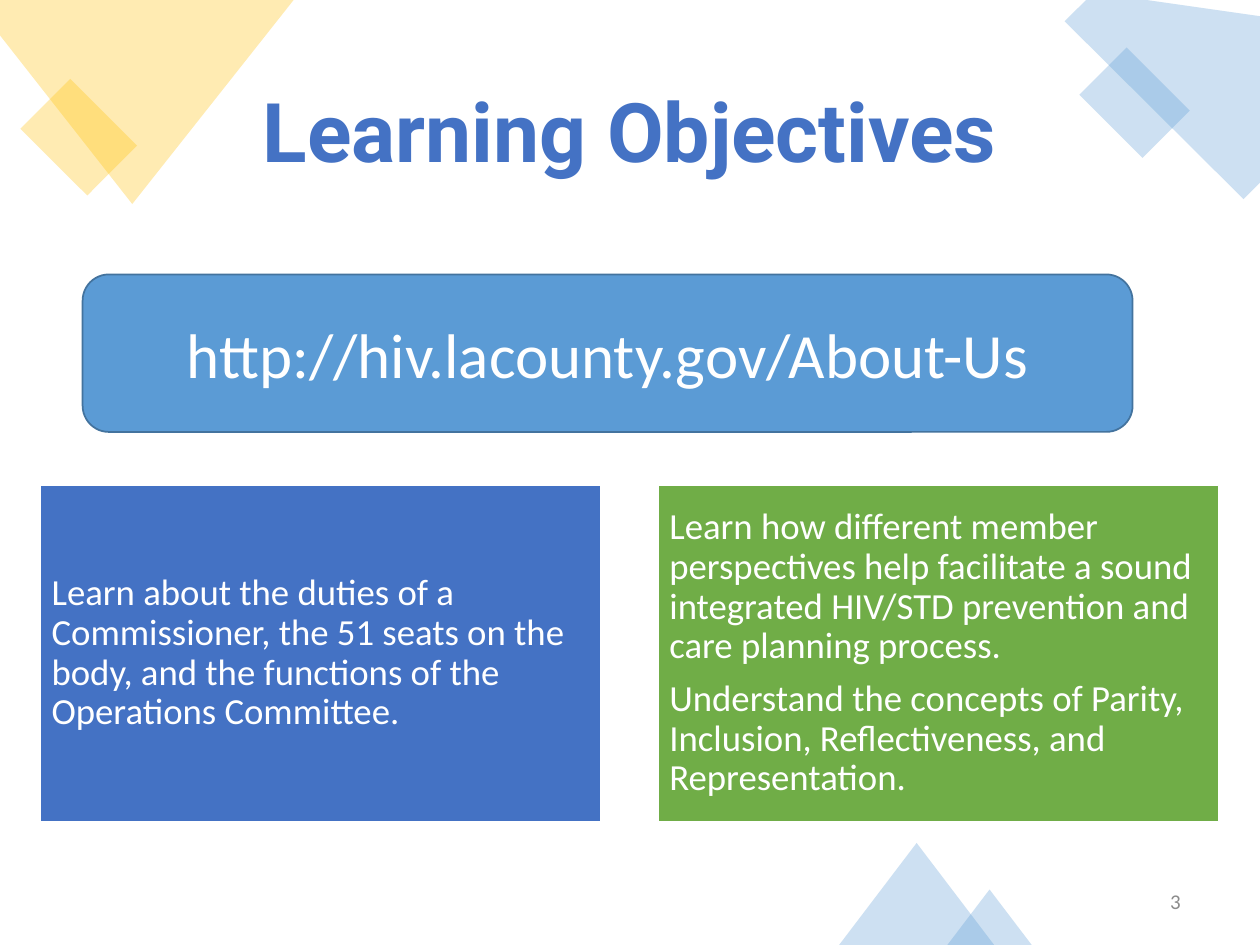
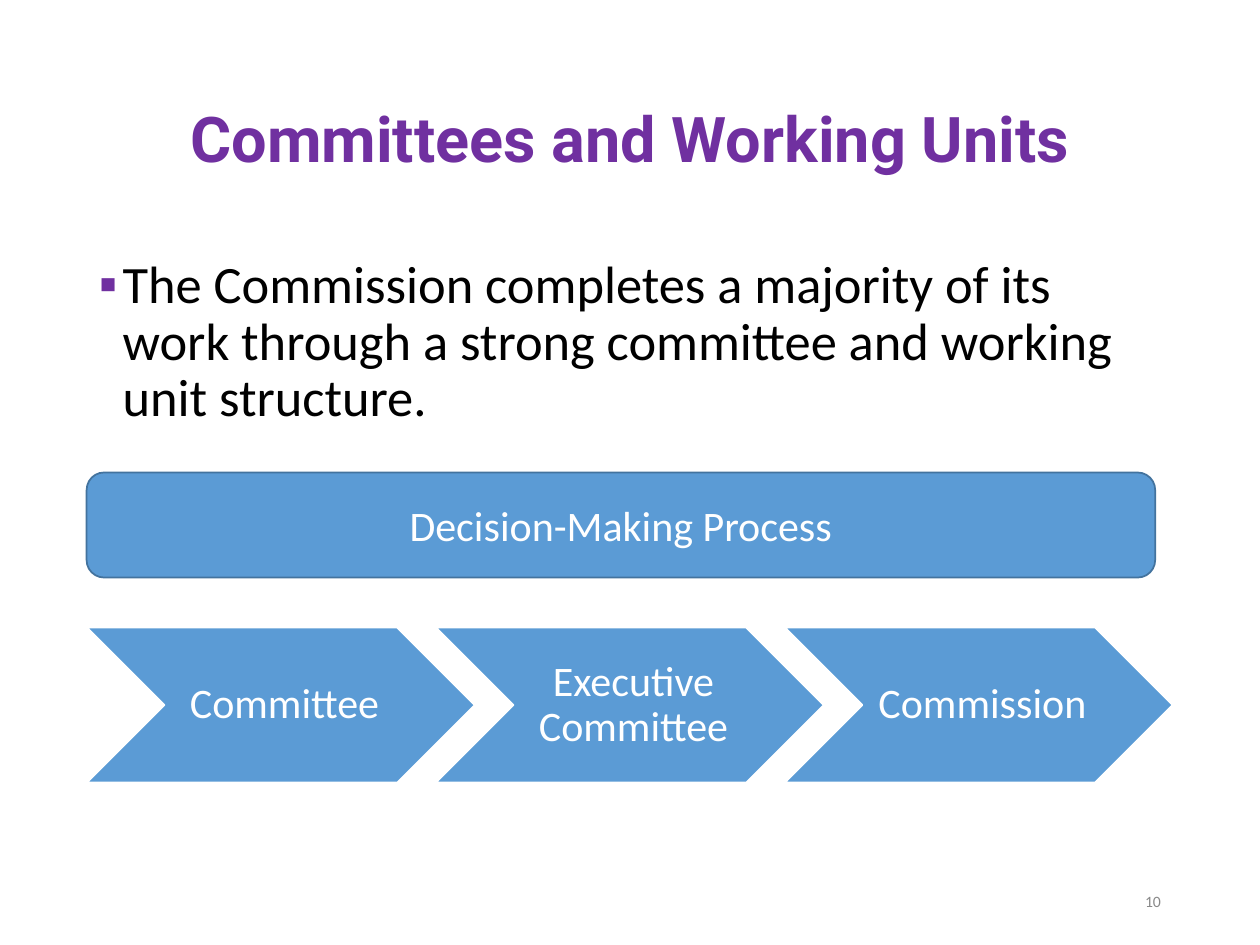
from dataclasses import dataclass, field
from typing import Any

from lxml.etree import SubElement
from pptx import Presentation
from pptx.dml.color import RGBColor
from pptx.enum.shapes import MSO_SHAPE
from pptx.enum.text import MSO_ANCHOR, MSO_AUTO_SIZE, PP_ALIGN
from pptx.oxml.ns import qn
from pptx.util import Pt

COLORS = {
    "indigo": "4472C4",
    "blue": "5B9BD5",
    "edge": "43739E",
    "green": "70AD47",
    "gold": "FFC000",
    "purple": "7030A0",
    "white": "FFFFFF",
    "black": "000000",
    "gray": "8C8C8C",
    "pale_gray": "898989",
}
BODY_FONT, TITLE_FONT = "Calibri", "Roboto"
DECOR_OPACITY = 30


@dataclass
class Box:
    left: float
    top: float
    width: float
    height: float

    def lengths(self) -> tuple:
        return tuple(Pt(v) for v in (self.left, self.top, self.width, self.height))


@dataclass
class Style:
    size: float
    color: str = "white"
    font: str = BODY_FONT
    bold: bool = False
    anchor: Any = MSO_ANCHOR.MIDDLE
    insets: tuple = (7.2, 3.6, 7.2, 3.6)
    para: dict = field(default_factory=dict)


@dataclass
class Panel:
    kind: Any
    box: Box
    fill: str
    line: str
    paragraphs: list
    style: Style


@dataclass
class Decor:
    kind: Any
    box: Box
    color: str
    rotation: float = 0


@dataclass
class Outline:
    points: list
    color: str


CENTERED = {"alignment": PP_ALIGN.CENTER}
TITLE_PARA = CENTERED | {"line_spacing": 0.9}
CARD_STYLE = Style(21, insets=(6.5,) * 4, para={
    "alignment": PP_ALIGN.LEFT, "line_spacing": 0.9, "space_after": Pt(7.35)})
STEP_STYLE = Style(24, insets=(7.2, 2.9, 2.9, 2.9), para=TITLE_PARA | {"space_after": Pt(8.4)})
BULLET_STYLE = Style(30, "black", anchor=MSO_ANCHOR.TOP, para={
    "line_spacing": 0.9, "space_before": Pt(7.5)})

OUTLINES = [
    Outline([(0, 0), (167.8, 0), (75.6, 116.6), (0, 20.2)], "gold"),
    Outline([(625, -4.3), (720.7, 9.4), (733, 91.4), (710.6, 113.8), (608.4, 12.2)], "blue"),
]
DECORS = [
    Decor(MSO_SHAPE.RECTANGLE, Box(18, 58.3, 54, 40.3), "gold", 45),
    Decor(MSO_SHAPE.RECTANGLE, Box(622.8, 39.6, 51.1, 38.2), "blue", 45),
    Decor(MSO_SHAPE.ISOSCELES_TRIANGLE, Box(479.5, 481.7, 88.6, 58.3), "blue"),
    Decor(MSO_SHAPE.ISOSCELES_TRIANGLE, Box(541.4, 508.3, 48.2, 31.7), "blue"),
]
CARDS = [
    ("indigo", ["Learn about the duties of a Commissioner, the 51 seats on the body, "
                "and the functions of the Operations Committee."]),
    ("green", ["Learn how different member perspectives help facilitate a sound integrated "
               "HIV/STD prevention and care planning process.",
               "Understand the concepts of Parity, Inclusion, Reflectiveness, "
               "and Representation."]),
]
CARD_LEFT, CARD_PITCH = 23, 353
STEPS = ["Committee", "Executive Committee", "Commission"]
STEP_LEFT, STEP_PITCH = 49.7, 199.4


def rgb(name: str) -> RGBColor:
    return RGBColor.from_string(COLORS[name])


def apply(target: Any, values: dict) -> None:
    for name, value in values.items():
        setattr(target, name, value)


def write(s: Any, paragraphs: list, style: Style) -> None:
    tf = s.text_frame
    sides = ("margin_left", "margin_top", "margin_right", "margin_bottom")
    apply(tf, dict(zip(sides, map(Pt, style.insets))))
    apply(tf, {"word_wrap": True, "auto_size": MSO_AUTO_SIZE.NONE,
               "vertical_anchor": style.anchor})
    for i, text in enumerate(paragraphs):
        p = tf.add_paragraph() if i else tf.paragraphs[0]
        apply(p, style.para)
        r = p.add_run()
        r.text = text
        apply(r.font, {"name": style.font, "size": Pt(style.size), "bold": style.bold})
        r.font.color.rgb = rgb(style.color)


def paint(s: Any, fill: str) -> None:
    s.shadow.inherit = False
    s.fill.solid()
    s.fill.fore_color.rgb = rgb(fill)


def add_panel(sp: Any, panel: Panel) -> None:
    s = sp.add_shape(panel.kind, *panel.box.lengths())
    paint(s, panel.fill)
    s.line.color.rgb = rgb(panel.line)
    s.line.width = Pt(1)
    write(s, panel.paragraphs, panel.style)


def add_banner(sp: Any, box: Box, text: str, size: float) -> None:
    add_panel(sp, Panel(MSO_SHAPE.ROUNDED_RECTANGLE, box, "blue", "edge", [text],
                        Style(size, para=CENTERED)))


def make_translucent(s: Any, color: str) -> None:
    paint(s, color)
    s.line.fill.background()
    clr = next(s.element.spPr.iter(qn("a:srgbClr")))
    SubElement(clr, qn("a:alpha"), val=str(DECOR_OPACITY * 1000))


def add_outline(sp: Any, outline: Outline) -> None:
    points = [(Pt(x), Pt(y)) for x, y in outline.points]
    builder = sp.build_freeform(*points[0])
    builder.add_line_segments(points[1:], close=True)
    make_translucent(builder.convert_to_shape(), outline.color)


def add_decor(sp: Any, decor: Decor) -> None:
    s = sp.add_shape(decor.kind, *decor.box.lengths())
    s.rotation = decor.rotation
    make_translucent(s, decor.color)


def add_text(sp: Any, box: Box, text: str, style: Style) -> Any:
    s = sp.add_textbox(*box.lengths())
    write(s, [text], style)
    return s


def add_number(sp: Any, left: float, number: str, size: float, color: str) -> None:
    add_text(sp, Box(left, 500.4, 162, 28.8), number,
             Style(size, color, para={"alignment": PP_ALIGN.RIGHT}))


def add_bullet(p: Any, char: str, color: str, indent: float) -> None:
    pr = p._p.get_or_add_pPr()
    pr.set("marL", str(Pt(indent)))
    pr.set("indent", str(-Pt(indent)))
    clr = SubElement(pr, qn("a:buClr"))
    SubElement(clr, qn("a:srgbClr"), val=COLORS[color])
    SubElement(pr, qn("a:buFont"), typeface="Arial")
    SubElement(pr, qn("a:buChar"), char=char)


def add_titled_slide(prs: Any, title: str, box: Box, size: float, color: str) -> Any:
    slide = prs.slides.add_slide(prs.slide_layouts[5])
    s = slide.shapes.title
    apply(s, dict(zip(("left", "top", "width", "height"), box.lengths())))
    write(s, [title], Style(size, color, TITLE_FONT, True, para=TITLE_PARA))
    return slide.shapes


def build_objectives(prs: Any) -> None:
    sp = add_titled_slide(prs, "Learning Objectives", Box(23, 25.2, 674, 104.4), 47, "indigo")
    for outline in OUTLINES:
        add_outline(sp, outline)
    for decor in DECORS:
        add_decor(sp, decor)
    add_number(sp, 519.8, "3", 12, "gray")
    for i, (fill, paragraphs) in enumerate(CARDS):
        box = Box(CARD_LEFT + i * CARD_PITCH, 277.4, 320.4, 192)
        add_panel(sp, Panel(MSO_SHAPE.RECTANGLE, box, fill, "white", paragraphs, CARD_STYLE))
    add_banner(sp, Box(47.2, 156.8, 600, 90), "http://hiv.lacounty.gov/About-Us", 36)


def build_committees(prs: Any) -> None:
    sp = add_titled_slide(prs, "Committees and Working Units",
                          Box(49.5, 28.8, 621, 104.4), 36, "purple")
    s = add_text(sp, Box(49.5, 144, 621, 342.7),
                 "The Commission completes a majority of its work through a strong "
                 "committee and working unit structure.", BULLET_STYLE)
    add_bullet(s.text_frame.paragraphs[0], "▪", "purple", 13.5)
    add_number(sp, 508.5, "10", 9, "pale_gray")
    for i, step in enumerate(STEPS):
        box = Box(STEP_LEFT + i * STEP_PITCH, 358.6, 221.6, 88.6)
        add_panel(sp, Panel(MSO_SHAPE.CHEVRON, box, "blue", "white", [step], STEP_STYLE))
    add_banner(sp, Box(49.5, 270, 610.6, 60), "Decision-Making Process", 24)


def main() -> None:
    prs = Presentation()
    prs.slide_width, prs.slide_height = Pt(720), Pt(540)
    build_objectives(prs)
    build_committees(prs)
    prs.save("out.pptx")


if __name__ == "__main__":
    main()
